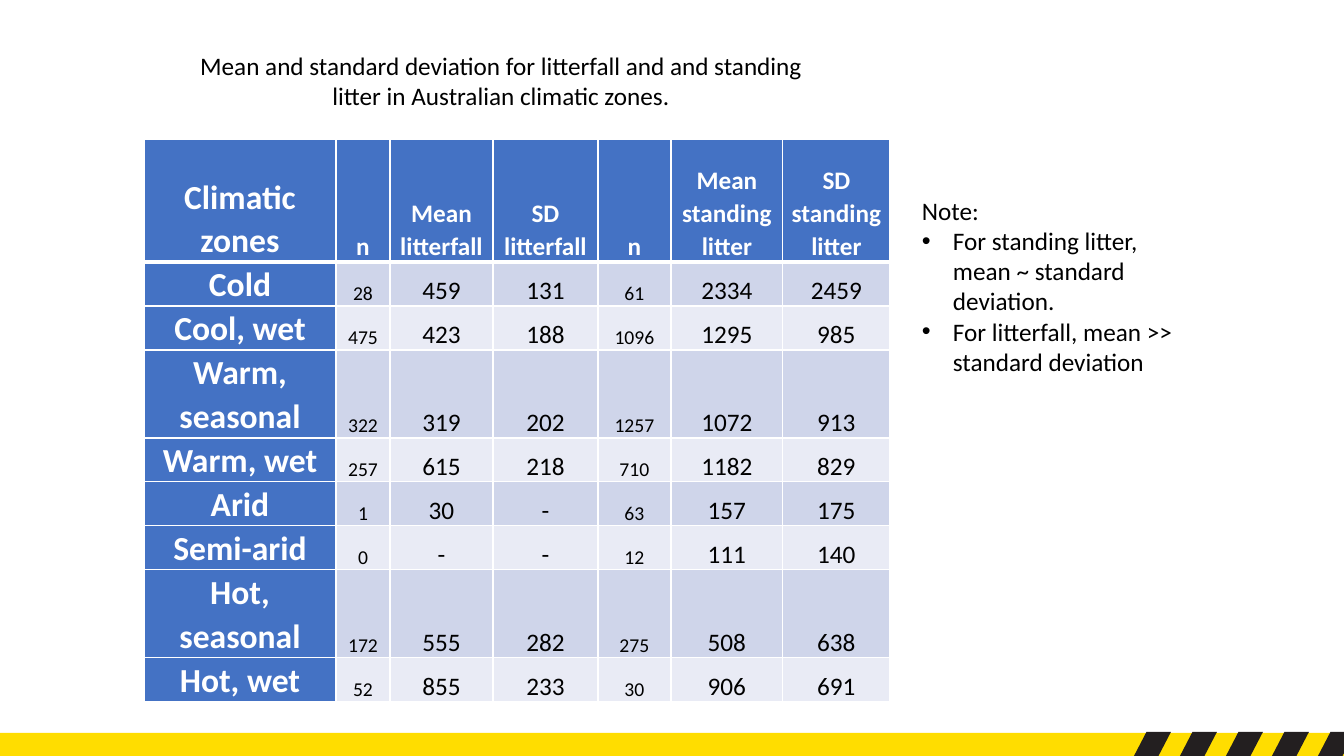
from dataclasses import dataclass

from lxml.etree import SubElement
from pptx import Presentation
from pptx.dml.color import RGBColor
from pptx.enum.shapes import MSO_SHAPE as Preset
from pptx.enum.text import MSO_ANCHOR as Anchor, MSO_AUTO_SIZE as AutoSize, PP_ALIGN as Align
from pptx.oxml.ns import qn
from pptx.util import Emu, Pt

SLIDE_W, SLIDE_H = 1344, 756
EMU_PER_PX = 12192000 / SLIDE_W
FONT = "Calibri"
WHITE, BLACK, BLUE = "FFFFFF", "000000", "4472C4"
YELLOW, CHARCOAL = "FFDD00", "231F20"
BANDS = ("CFD5EA", "E9EBF5")


@dataclass(frozen=True)
class Box:
    left: int
    top: int
    width: int
    height: int

    def emu(self) -> tuple[Emu, ...]:
        return tuple(px(v) for v in (self.left, self.top, self.width, self.height))


@dataclass(frozen=True)
class Zone:
    name: str
    litterfall: tuple[str, str, str]
    standing: tuple[str, str, str]
    height: int = 44

    def cells(self) -> tuple[str, ...]:
        return (self.name, *self.litterfall, *self.standing)


HEADINGS = ("Climatic zones", "n", "Mean litterfall", "SD litterfall",
            "n", "Mean standing litter", "SD standing litter")
COLUMN_WIDTHS = (192, 54, 103, 105, 73, 112, 107)
COLUMN_SIZES = (24, 14, 18, 18, 14, 18, 18)
HEADER_HEIGHT = 123
ZONES = (
    Zone("Cold", ("28", "459", "131"), ("61", "2334", "2459")),
    Zone("Cool, wet", ("475", "423", "188"), ("1096", "1295", "985")),
    Zone("Warm, seasonal", ("322", "319", "202"), ("1257", "1072", "913"), 88),
    Zone("Warm, wet", ("257", "615", "218"), ("710", "1182", "829")),
    Zone("Arid", ("1", "30", "-"), ("63", "157", "175")),
    Zone("Semi-arid", ("0", "-", "-"), ("12", "111", "140")),
    Zone("Hot, seasonal", ("172", "555", "282"), ("275", "508", "638"), 88),
    Zone("Hot, wet", ("52", "855", "233"), ("30", "906", "691")),
)
CAPTION = ("Mean and standard deviation for litterfall and and standing "
           "litter in Australian climatic zones.")
NOTES = ("For standing litter, mean ~ standard deviation.",
         "For litterfall, mean >> standard deviation")


def px(value: int) -> Emu:
    return Emu(round(value * EMU_PER_PX))


def color(hex_code: str) -> RGBColor:
    return RGBColor.from_string(hex_code)


def apply(target, formats: dict) -> None:
    for name, value in formats.items():
        setattr(target, name, value)


def write(paragraph, text: str, size: int = 18, ink: str = BLACK, bold: bool = False) -> None:
    run = paragraph.add_run()
    run.text = text
    apply(run.font, {"name": FONT, "size": Pt(size), "bold": bold})
    run.font.color.rgb = color(ink)


def add_block(slide, preset, box: Box, fill: str):
    block = slide.shapes.add_shape(preset, *box.emu())
    block.shadow.inherit = False
    block.fill.solid()
    block.fill.fore_color.rgb = color(fill)
    block.line.fill.background()
    return block


def add_footer(slide) -> None:
    add_block(slide, Preset.RECTANGLE, Box(0, 733, SLIDE_W, 23), YELLOW)
    for i in range(5):
        stripe = add_block(slide, Preset.PARALLELOGRAM, Box(1134 + 46 * i, 732, 37, 24), CHARCOAL)
        stripe.adjustments[0] = 0.52


def add_caption(slide) -> None:
    caption = slide.shapes.title
    apply(caption, dict(zip(("left", "top", "width", "height"), Box(185, 45, 632, 72).emu())))
    apply(caption.text_frame, {"word_wrap": True, "auto_size": AutoSize.NONE,
                               "vertical_anchor": Anchor.TOP})
    paragraph = caption.text_frame.paragraphs[0]
    paragraph.alignment = Align.CENTER
    write(paragraph, CAPTION)


def set_borders(cell, top: int, bottom: int) -> None:
    properties = cell._tc.get_or_add_tcPr()
    for side, points in (("L", 1), ("R", 1), ("T", top), ("B", bottom)):
        line = SubElement(properties, qn(f"a:ln{side}"), w=str(Pt(points)))
        SubElement(SubElement(line, qn("a:solidFill")), qn("a:srgbClr"), val=WHITE)


def fill_cell(cell, text: str, size: int, row: int, column: int) -> None:
    heading = row == 0 or column == 0
    set_borders(cell, top=3 if row == 1 else 1, bottom=3 if row == 0 else 1)
    cell.fill.solid()
    cell.fill.fore_color.rgb = color(BLUE if heading else BANDS[(row - 1) % 2])
    apply(cell, {"vertical_anchor": Anchor.BOTTOM, "margin_left": px(7),
                 "margin_right": px(7), "margin_top": 0, "margin_bottom": 0})
    paragraph = cell.text_frame.paragraphs[0]
    apply(paragraph, {"alignment": Align.CENTER, "line_spacing": 1.07})
    write(paragraph, text, size, WHITE if heading else BLACK, heading)


def add_litter_table(slide) -> None:
    heights = (HEADER_HEIGHT, *(zone.height for zone in ZONES))
    box = Box(144, 139, sum(COLUMN_WIDTHS), sum(heights))
    table = slide.shapes.add_table(len(heights), len(HEADINGS), *box.emu()).table
    apply(table, {"first_row": True, "first_col": True, "horz_banding": False})
    for column, width in zip(table.columns, COLUMN_WIDTHS):
        column.width = px(width)
    for row, height in zip(table.rows, heights):
        row.height = px(height)
    for r, texts in enumerate((HEADINGS, *(zone.cells() for zone in ZONES))):
        for c, text in enumerate(texts):
            size = 18 if r == 0 and c > 0 else COLUMN_SIZES[c]
            fill_cell(table.cell(r, c), text, size, r, c)


def add_notes(slide) -> None:
    frame = slide.shapes.add_textbox(*Box(912, 190, 278, 194).emu()).text_frame
    frame.word_wrap = True
    write(frame.paragraphs[0], "Note:")
    for note in NOTES:
        paragraph = frame.add_paragraph()
        properties = paragraph._p.get_or_add_pPr()
        properties.set("marL", str(px(31)))
        properties.set("indent", str(-px(31)))
        SubElement(properties, qn("a:buFont"), typeface="Arial")
        SubElement(properties, qn("a:buChar"), char="•")
        write(paragraph, note)


def main() -> None:
    deck = Presentation()
    apply(deck, {"slide_width": px(SLIDE_W), "slide_height": px(SLIDE_H)})
    slide = deck.slides.add_slide(deck.slide_layouts.get_by_name("Title Only"))
    # Hazard-striped footer
    add_footer(slide)
    # Caption, table and remarks
    add_caption(slide)
    add_litter_table(slide)
    add_notes(slide)
    deck.save("out.pptx")


if __name__ == "__main__":
    main()
